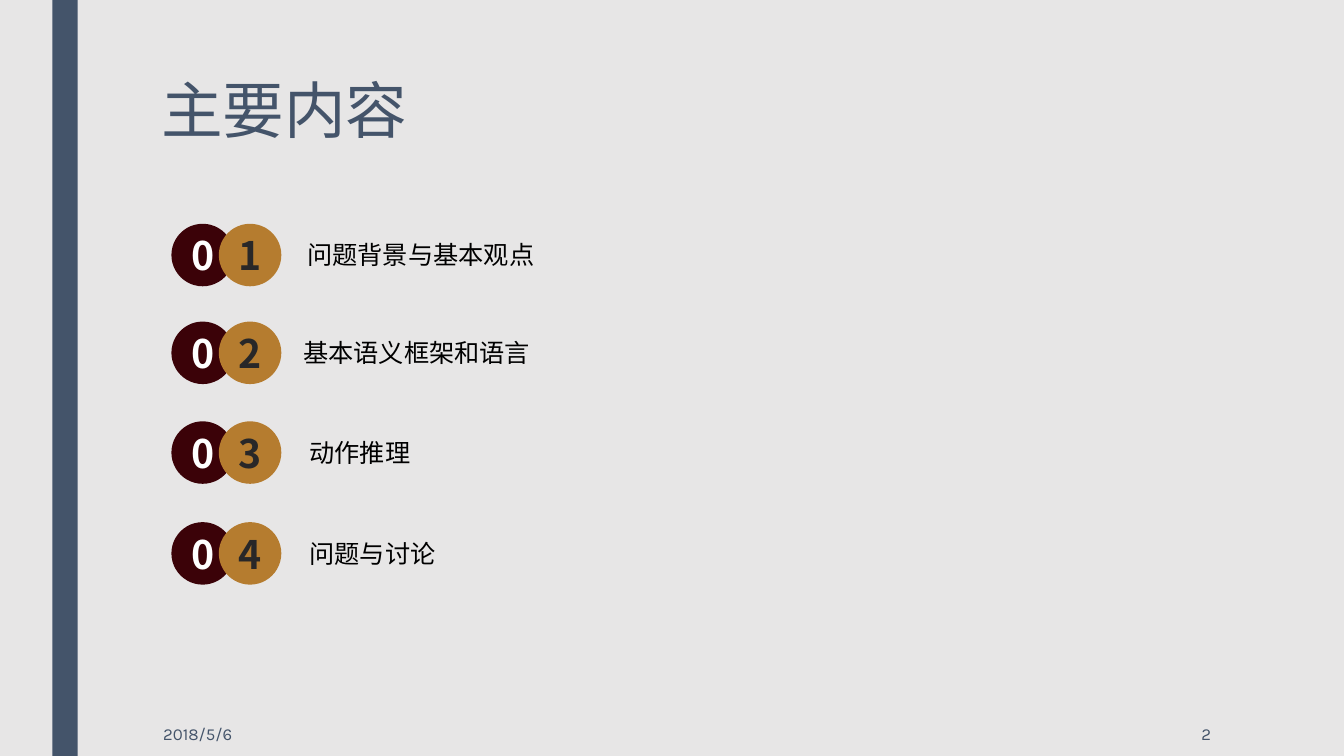
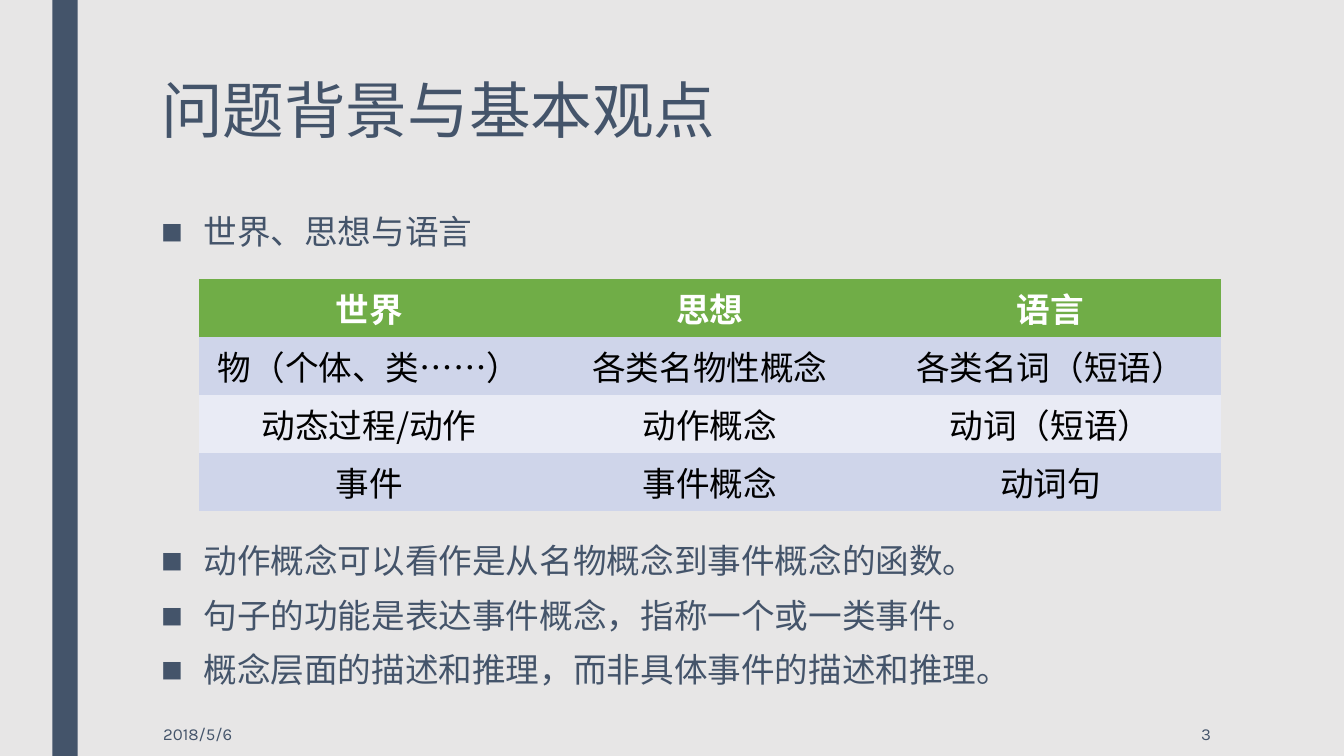
from lxml import etree
from pptx import Presentation
from pptx.dml.color import RGBColor
from pptx.enum.shapes import MSO_SHAPE
from pptx.enum.text import MSO_ANCHOR, PP_ALIGN
from pptx.oxml.ns import qn
from pptx.util import Inches, Pt

RECTANGLE, OVAL = MSO_SHAPE.RECTANGLE, MSO_SHAPE.OVAL
TOP, MIDDLE = MSO_ANCHOR.TOP, MSO_ANCHOR.MIDDLE
LEFT, CENTER, RIGHT = PP_ALIGN.LEFT, PP_ALIGN.CENTER, PP_ALIGN.RIGHT
LATIN_FONT, CJK_FONT = "Karla", "Noto Sans CJK SC"
COLORS = {
    "background": "E7E6E6", "slate": "44546A", "maroon": "3B0208",
    "ochre": "B57C2F", "charcoal": "282728", "white": "FFFFFF",
    "black": "000000", "header": "70AD47", "row_dark": "CFD5EA",
    "row_light": "E9EBF5",
}
RGB = {name: RGBColor.from_string(code) for name, code in COLORS.items()}


def write_text(frame, *lines, size=24, color="slate", font=LATIN_FONT, bold=False,
               align=LEFT, anchor=TOP, spacing=None, bullet=None):
    frame.word_wrap = True
    frame.vertical_anchor = anchor
    for index, line in enumerate(lines):
        paragraph = frame.add_paragraph() if index else frame.paragraphs[0]
        paragraph.alignment = align
        if spacing:
            paragraph.line_spacing = spacing
        if bullet:
            paragraph.space_before, paragraph.space_after = Pt(10), Pt(2)
            properties = paragraph._p.get_or_add_pPr()
            properties.set("marL", str(Inches(0.42)))
            properties.set("indent", str(-Inches(0.42)))
            etree.SubElement(properties, qn("a:buSzPct"), val="65000")
            etree.SubElement(properties, qn("a:buFont"), typeface=CJK_FONT)
            etree.SubElement(properties, qn("a:buChar"), char=bullet)
        run = paragraph.add_run()
        run.text = line
        run.font.size, run.font.bold, run.font.name = Pt(size), bold, font
        run.font.color.rgb = RGB[color]
        etree.SubElement(run._r.get_or_add_rPr(), qn("a:ea"), typeface=CJK_FONT)


def add_filled(slide, preset, left, top, width, height, color):
    shape = slide.shapes.add_shape(
        preset, Inches(left), Inches(top), Inches(width), Inches(height))
    shape.shadow.inherit = False
    shape.fill.solid()
    shape.fill.fore_color.rgb = RGB[color]
    shape.line.fill.background()
    return shape


prs = Presentation()
prs.slide_width, prs.slide_height = Inches(13.33), Inches(7.5)
background = prs.slide_master.background.fill
background.solid()
background.fore_color.rgb = RGB["background"]

# Shared frame
slides = []
for number, title in enumerate(["主要内容", "问题背景与基本观点"], start=2):
    slide = prs.slides.add_slide(prs.slide_layouts[6])
    add_filled(slide, RECTANGLE, 0.52, 0, 0.25, 7.5, "slate")
    heading = slide.shapes.add_textbox(Inches(1.5), Inches(0.75), Inches(10.5), Inches(1.3))
    write_text(heading.text_frame, title, size=44, spacing=0.89)
    for text, left, width, align in [("2018/5/6", 1.52, 1.32, LEFT),
                                     (str(number), 10.36, 1.75, RIGHT)]:
        footer = slide.shapes.add_textbox(Inches(left), Inches(7.06), Inches(width), Inches(0.44))
        write_text(footer.text_frame, text, size=12, align=align, anchor=MIDDLE)
    slides.append(slide)
agenda, viewpoint = slides

# Agenda
agenda_items = [
    ("问题背景与基本观点", 2.22, 2.95),
    ("基本语义框架和语言", 3.19, 2.91),
    ("动作推理", 4.18, 2.97),
    ("问题与讨论", 5.18, 2.97),
]
for number, (topic, top, left) in enumerate(agenda_items, start=1):
    for digit, digit_left, fill, color in [("0", 1.7, "maroon", "white"),
                                           (str(number), 2.17, "ochre", "charcoal")]:
        frame = add_filled(agenda, OVAL, digit_left, top, 0.62, 0.62, fill).text_frame
        frame.margin_left = frame.margin_right = frame.margin_top = frame.margin_bottom = 0
        write_text(frame, digit, size=28, color=color, font=CJK_FONT, bold=True,
                   align=CENTER, anchor=MIDDLE)
    label = agenda.shapes.add_textbox(Inches(left), Inches(top + 0.11), Inches(3.89), Inches(0.4))
    write_text(label.text_frame, topic, size=18, color="black", font=CJK_FONT)

# Background and viewpoint
statements = [
    (2.08, 0.6, ["世界、思想与语言"]),
    (5.34, 1.6, ["动作概念可以看作是从名物概念到事件概念的函数。",
                 "句子的功能是表达事件概念，指称一个或一类事件。",
                 "概念层面的描述和推理，而非具体事件的描述和推理。"]),
]
for top, height, lines in statements:
    body = viewpoint.shapes.add_textbox(Inches(1.5), Inches(top), Inches(10.5), Inches(height))
    write_text(body.text_frame, *lines, spacing=0.94, bullet="■")

correspondence = [
    ["世界", "思想", "语言"],
    ["物（个体、类……）", "各类名物性概念", "各类名词（短语）"],
    ["动态过程/动作", "动作概念", "动词（短语）"],
    ["事件", "事件概念", "动词句"],
]
row_fills = ["header", "row_dark", "row_light", "row_dark"]
table = viewpoint.shapes.add_table(
    4, 3, Inches(1.97), Inches(2.77), Inches(10.14), Inches(2.3)).table
for row_index, (row, row_fill) in enumerate(zip(correspondence, row_fills)):
    is_header = row_index == 0
    for column_index, text in enumerate(row):
        cell = table.cell(row_index, column_index)
        cell.fill.solid()
        cell.fill.fore_color.rgb = RGB[row_fill]
        cell.margin_left = cell.margin_right = Inches(0.07)
        cell.margin_top = cell.margin_bottom = 0
        cell.vertical_anchor = MIDDLE
        write_text(cell.text_frame, text, color="white" if is_header else "black",
                   font=CJK_FONT, bold=is_header, align=CENTER, anchor=MIDDLE)
        borders = cell._tc.get_or_add_tcPr()
        for position, side in enumerate(["lnL", "lnR", "lnT", "lnB"]):
            border = etree.Element(qn(f"a:{side}"), w="0")
            etree.SubElement(border, qn("a:noFill"))
            borders.insert(position, border)

prs.save("out.pptx")
